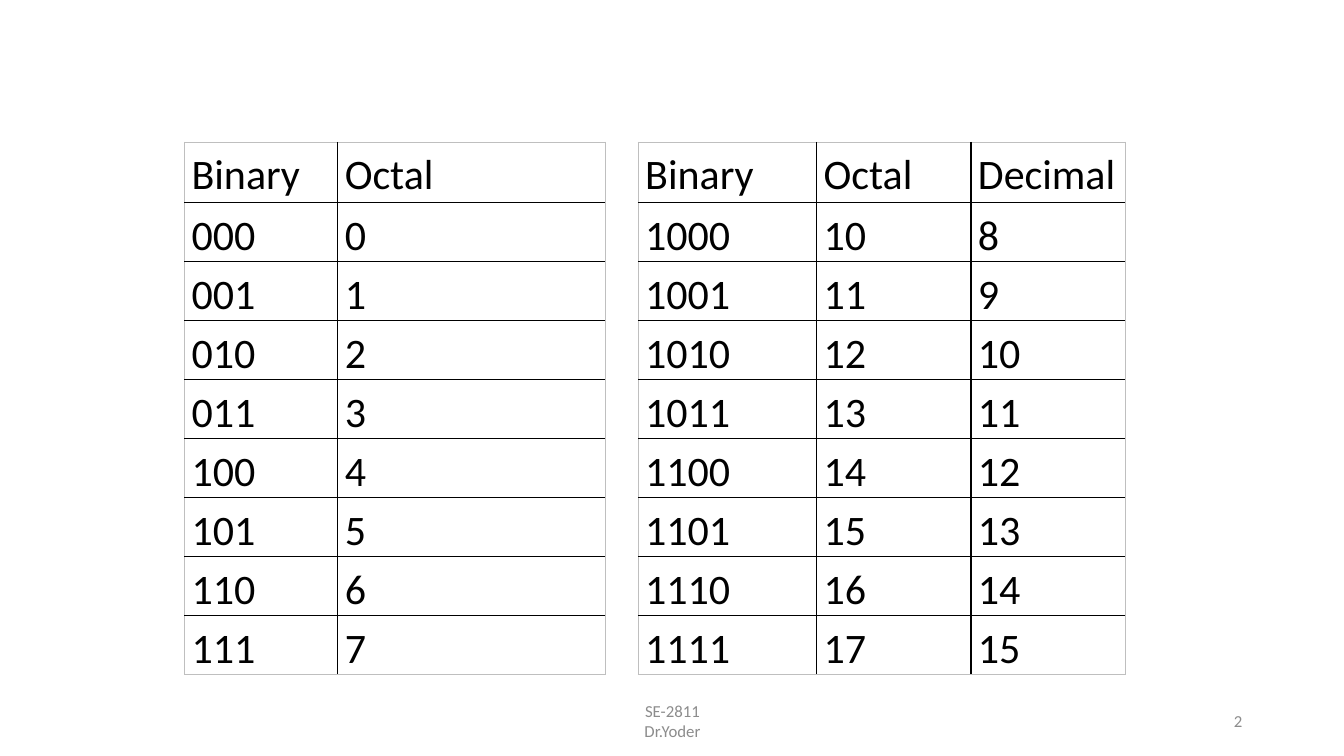
from lxml import etree
from pptx import Presentation
from pptx.dml.color import RGBColor
from pptx.enum import text
from pptx.oxml import ns
from pptx.util import Inches, Pt

FONT = "Calibri"
BLACK = RGBColor(0x00, 0x00, 0x00)
FOOTER_GREY = RGBColor(0x8C, 0x8C, 0x8C)
EDGE_GREY = RGBColor(0xBF, 0xBF, 0xBF)
INNER_LINE = (BLACK, 1)
OUTER_LINE = (EDGE_GREY, 0.5)

HEADER_HEIGHT, ROW_HEIGHT = 0.6, 0.58

# left, top, column widths, rows
TABLES = [
    (1.83, 1.41, (1.52, 2.65),
     [("Binary", "Octal")] + [(f"{n:03b}", f"{n:o}") for n in range(8)]),
    (6.33, 1.41, (1.77, 1.53, 1.53),
     [("Binary", "Octal", "Decimal")]
     + [(f"{n:b}", f"{n:o}", str(n)) for n in range(8, 16)]),
]

# left, width, alignment, lines
FOOTERS = [
    (4.42, 4.5, text.PP_ALIGN.CENTER, ("SE-2811", "Dr.Yoder")),
    (9.42, 3, text.PP_ALIGN.RIGHT, ("2",)),
]
FOOTER_TOP, FOOTER_HEIGHT = 6.95, 0.4


def style_font(p, size, color):
    p.font.name = FONT
    p.font.size = Pt(size)
    p.font.color.rgb = color


def add_border(cell, side, color, width):
    """Draw one side (L, R, T or B) of a cell; call before setting its fill."""
    tc_pr = cell._tc.get_or_add_tcPr()
    ln = etree.SubElement(tc_pr, ns.qn(f"a:ln{side}"), w=str(Pt(width)))
    fill = etree.SubElement(ln, ns.qn("a:solidFill"))
    etree.SubElement(fill, ns.qn("a:srgbClr"), val=str(color))


def add_number_table(s, left, top, widths, rows):
    heights = [HEADER_HEIGHT] + [ROW_HEIGHT] * (len(rows) - 1)
    table = s.shapes.add_table(
        len(rows), len(widths), Inches(left), Inches(top),
        Inches(sum(widths)), Inches(sum(heights))).table
    table.first_row = table.horz_banding = False
    for column, width in zip(table.columns, widths):
        column.width = Inches(width)
    for i, (row, height) in enumerate(zip(rows, heights)):
        table.rows[i].height = Inches(height)
        for j, value in enumerate(row):
            cell = table.cell(i, j)
            on_edge = {"L": j == 0, "R": j == len(row) - 1,
                       "T": i == 0, "B": i == len(rows) - 1}
            for side, outer in on_edge.items():
                add_border(cell, side, *(OUTER_LINE if outer else INNER_LINE))
            cell.fill.background()
            cell.margin_left = cell.margin_right = Inches(0.07)
            cell.margin_top = cell.margin_bottom = 0
            p = cell.text_frame.paragraphs[0]
            p.text = value
            p.line_spacing = 1.15
            style_font(p, 30, BLACK)


def add_footer(s, left, width, align, lines):
    tf = s.shapes.add_textbox(Inches(left), Inches(FOOTER_TOP), Inches(width),
                              Inches(FOOTER_HEIGHT)).text_frame
    tf.word_wrap = True
    tf.vertical_anchor = text.MSO_ANCHOR.MIDDLE
    tf.text = "\n".join(lines)
    for p in tf.paragraphs:
        p.alignment = align
        style_font(p, 12, FOOTER_GREY)


def main():
    prs = Presentation()
    prs.slide_width, prs.slide_height = Inches(13.33), Inches(7.5)
    s = prs.slides.add_slide(prs.slide_layouts[6])
    for table in TABLES:
        add_number_table(s, *table)
    for footer in FOOTERS:
        add_footer(s, *footer)
    prs.save("out.pptx")


if __name__ == "__main__":
    main()
